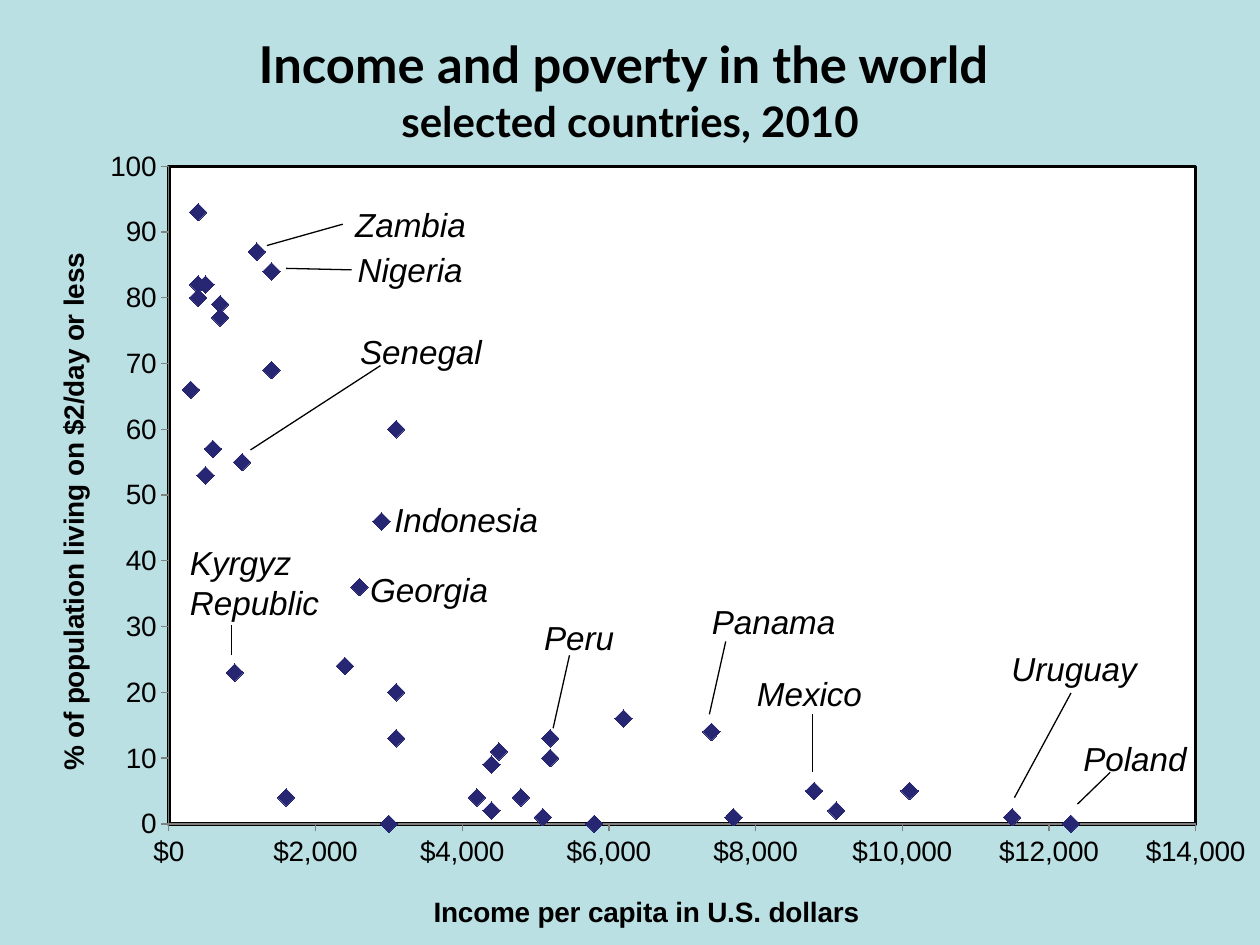
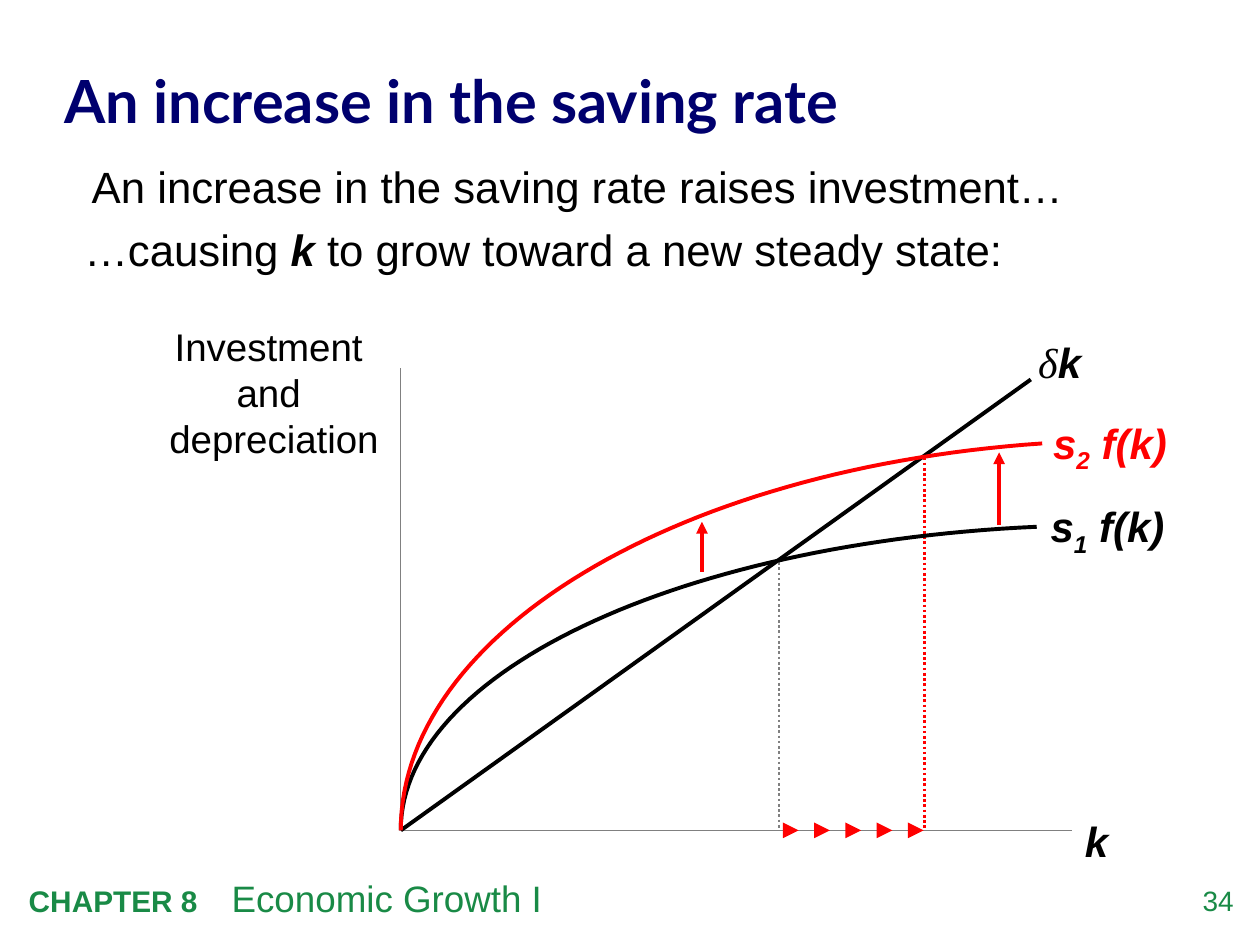
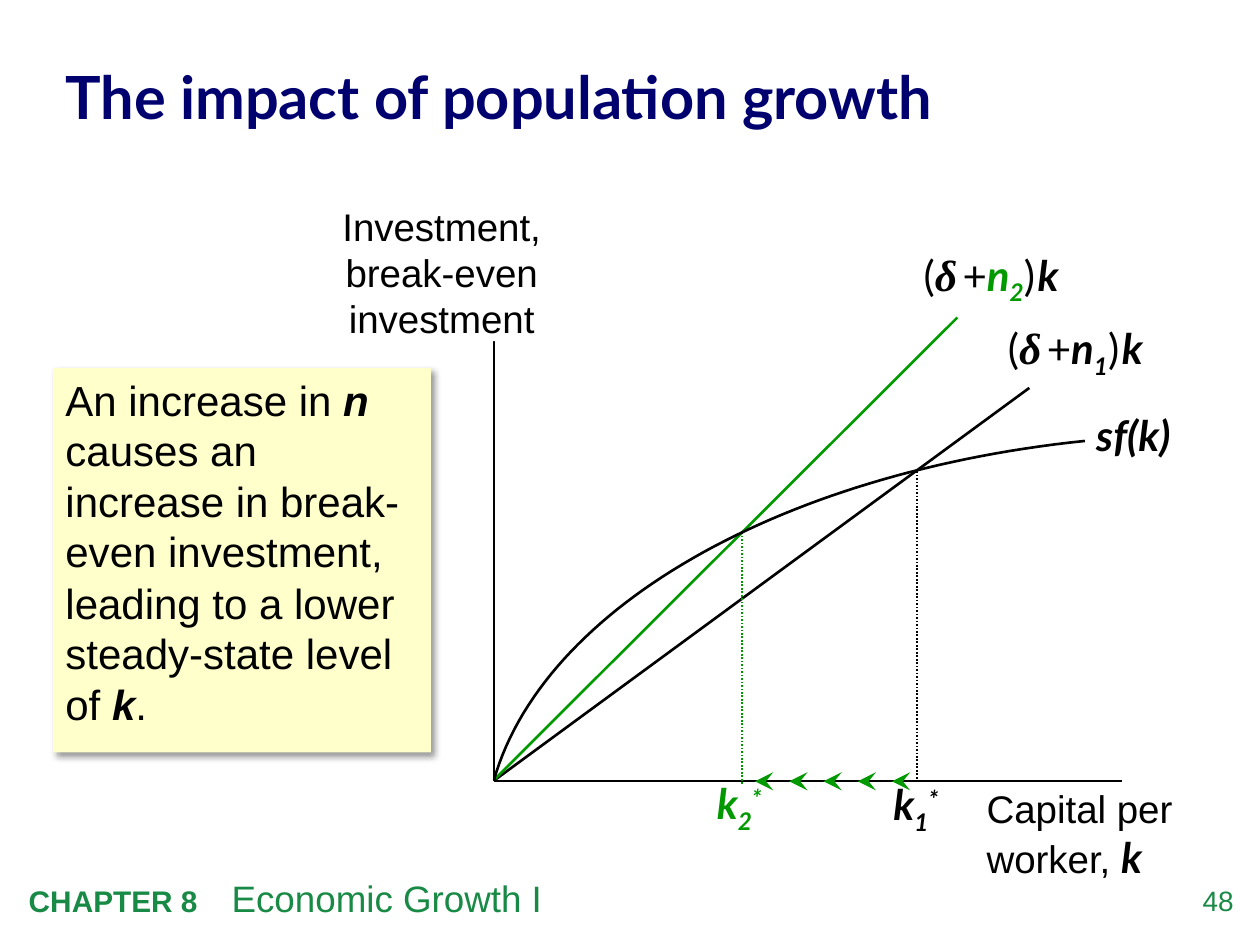
"""Builds three economic growth slides: a poverty scatter chart and two saving diagrams."""
from copy import deepcopy

from lxml import etree
from pptx import Presentation
from pptx.chart.data import XyChartData
from pptx.dml.color import RGBColor
from pptx.enum.chart import XL_CHART_TYPE, XL_MARKER_STYLE, XL_TICK_MARK
from pptx.enum.dml import MSO_LINE
from pptx.enum.shapes import MSO_CONNECTOR, MSO_SHAPE
from pptx.enum.text import MSO_ANCHOR, MSO_AUTO_SIZE, PP_ALIGN
from pptx.oxml.ns import qn
from pptx.util import Cm, Pt

SCATTER = XL_CHART_TYPE.XY_SCATTER
DIAMOND = XL_MARKER_STYLE.DIAMOND
TICK_OUT = XL_TICK_MARK.OUTSIDE
DOTTED = MSO_LINE.ROUND_DOT
STRAIGHT = MSO_CONNECTOR.STRAIGHT
RECTANGLE = MSO_SHAPE.RECTANGLE
TOP, MIDDLE = MSO_ANCHOR.TOP, MSO_ANCHOR.MIDDLE
FIXED = MSO_AUTO_SIZE.NONE
LEFT, CENTER, RIGHT = PP_ALIGN.LEFT, PP_ALIGN.CENTER, PP_ALIGN.RIGHT

BLACK, WHITE, GRAY, RED, GREEN = "000000", "FFFFFF", "808080", "FF0000", "009900"
PALE_BLUE, NAVY, FOOTER_GREEN = "BBE0E3", "00006E", "198A46"
MARKER_BLUE, NOTE_YELLOW = "262673", "FFFFCC"
BODY_FONT, TITLE_FONT, GREEK_FONT = "Arial", "Lato", "Times New Roman"

STRONG = dict(bold=True, italic=True)
SUB = dict(STRONG, baseline=-25)
SUPER = dict(STRONG, baseline=30)
DEFAULT_INSETS = (0.25, 0.13, 0.25, 0.13)
FLUSH = (0, 0, 0, 0)
RAISED = (0, 0, 0, 0.25)

CHAPTER, CHAPTER_NAME = "CHAPTER 8", "Economic Growth I"

INCOMES = [300, 400, 400, 400, 500, 500, 600, 700, 700, 900, 1000, 1200, 1400,
           1400, 1600, 2400, 2600, 2900, 3000, 3100, 3100, 3100, 4200, 4400,
           4400, 4500, 4800, 5100, 5200, 5200, 5800, 6200, 7400, 7700, 8800,
           9100, 10100, 11500, 12300]
POVERTY = [66, 82, 93, 80, 53, 82, 57, 77, 79, 23, 55, 87, 69, 84, 4, 24, 36,
           46, 0, 60, 13, 20, 4, 2, 9, 11, 4, 1, 10, 13, 0, 16, 14, 1, 5, 2, 5,
           1, 0]
COUNTRIES = [
    ("Zambia", (6.91, 3.99, 4.5, 1.07), (5.38, 4.95, 6.91, 4.52)),
    ("Nigeria", (6.96, 4.9, 4.5, 1.07), (5.77, 5.41, 7.09, 5.44)),
    ("Senegal", (7.01, 6.55, 3.2, 1.07), (5.05, 9.07, 7.67, 7.37)),
    ("Indonesia", (7.7, 9.93, 4.5, 1.07), None),
    ("Georgia", (7.21, 11.35, 3.23, 1.07), None),
    ("Kyrgyz Republic", (3.58, 10.8, 3.43, 1.88), (4.67, 13.21, 4.67, 12.6)),
    ("Peru", (10.72, 12.32, 2.39, 1.07), (11.15, 14.68, 11.48, 13.21)),
    ("Panama", (14.1, 11.99, 3.66, 1.07), (14.3, 14.4, 14.63, 12.93)),
    ("Mexico", (15.01, 13.44, 2.74, 1.07), (16.38, 15.57, 16.38, 14.4)),
    ("Uruguay", (20.14, 12.93, 3.15, 1.07), (20.45, 16.08, 21.59, 13.97)),
    ("Poland", (21.59, 14.76, 2.64, 1.07), (21.72, 16.21, 22.38, 15.57)),
]


def break_even(index, color):
    """Return the runs of the break-even formula for one growth rate."""
    return ["(", ("δ", dict(STRONG, size=25, font=GREEK_FONT)), (" ", dict(size=12)),
            "+", ("n", dict(STRONG, color=color)), (index, dict(SUB, color=color)),
            ")", (" ", dict(size=6)), ("k", STRONG)]


def saving(index):
    """Return the runs of the investment formula for one saving rate."""
    return [("s", STRONG), (index, SUB), (" f(k)", STRONG)]


def steady_state(index):
    """Return the runs of a steady-state capital stock."""
    return [("k", STRONG), (index, SUB), ("*", SUPER)]


LATO = dict(font=TITLE_FONT, anchor=MIDDLE, insets=FLUSH)
LATO_RAISED = dict(LATO, insets=RAISED)

SAVING_RATE = dict(
    title="An increase in the saving rate", title_box=(1.3, 0.66, 22.91, 2.62),
    number="34",
    lines=[
        ((8.08, 7.42, 8.08, 16.74), GRAY, 0.75, {}),
        ((8.08, 16.74, 21.62, 16.74), GRAY, 0.75, {}),
        ((8.08, 16.74, 20.78, 7.65), BLACK, 2.25, {}),
        ((15.7, 11.33, 15.7, 16.74), GRAY, 1.5, dict(dash=DOTTED)),
        ((18.64, 9.22, 18.64, 16.74), RED, 1.5, dict(dash=DOTTED)),
        ((20.14, 10.59, 20.14, 9.12), RED, 2.25, dict(arrow="triangle")),
        ((14.15, 11.53, 14.15, 10.52), RED, 2.25, dict(arrow="triangle")),
    ],
    curves=[
        ([(20.9, 10.62), (13.61, 10.95), (8.08, 13.59), (8.08, 16.74)], BLACK, 2.25),
        ([(21.01, 8.94), (13.61, 9.45), (8.08, 12.78), (8.08, 16.74)], RED, 2.25),
    ],
    steps=dict(start=15.9, y=16.74, gap=0.63, length=0.2, color=RED, width=3,
               arrow="triangle"),
    labels=[
        (["An increase in the saving rate raises investment…"],
         (1.6, 3.1, 22.38, 1.32), dict(size=25)),
        (["…causing ", ("k", STRONG), " to grow toward a new steady state:"],
         (1.45, 4.37, 22.4, 1.32), dict(size=25)),
        (["Investment \nand \ndepreciation"], (2.77, 6.38, 5.51, 3.05),
         dict(size=22, align=CENTER, insets=(0.13,) * 4)),
        ([("k", STRONG)], (21.62, 16.31, 1.27, 1.27), {}),
        ([("δ", dict(font=GREEK_FONT, italic=True)), ("k", STRONG)],
         (20.68, 6.65, 1.83, 1.32), {}),
        (saving("1"), (20.93, 9.96, 3, 1.27), {}),
        (saving("2"), (20.98, 8.28, 3.61, 1.27), dict(color=RED)),
    ])

POPULATION_GROWTH = dict(
    title="The impact of population growth", title_box=(1.32, 0.64, 19.99, 2.49),
    number="48",
    lines=[
        ((9.96, 6.02, 9.96, 15.75), BLACK, 1, {}),
        ((9.96, 15.75, 22.61, 15.75), BLACK, 1, {}),
        ((9.98, 15.72, 20.75, 7.82), BLACK, 1.5, {}),
        ((9.98, 15.7, 19.3, 6.4), GREEN, 1.5, {}),
        ((18.49, 9.5, 18.49, 15.75), BLACK, 1, dict(dash=DOTTED)),
        ((14.96, 10.8, 14.96, 15.8), GREEN, 1, dict(dash=DOTTED)),
    ],
    curves=[
        ([(21.87, 8.89), (15.7, 9.53), (10.95, 12.27), (9.96, 15.72)], BLACK, 1.5),
    ],
    steps=dict(start=18.21, y=15.75, gap=-0.69, length=-0.23, color=GREEN,
               width=3.5, arrow="stealth"),
    labels=[
        (["Investment, break-even investment"], (6.35, 4.09, 5.11, 2.79),
         dict(size=22, align=CENTER, anchor=MIDDLE, insets=FLUSH, fill=WHITE)),
        (["Capital per \nworker, ", ("k", dict(STRONG, size=24, font=TITLE_FONT))],
         (19.89, 15.82, 4.45, 1.96), dict(size=22, anchor=MIDDLE, insets=FLUSH)),
        ([("sf(k)", STRONG)], (22.1, 8.26, 2.64, 1.02), LATO),
        (break_even("1", BLACK), (20.32, 6.53, 3.81, 1.07), LATO),
        (break_even("2", GREEN), (18.62, 5.05, 3.81, 1.32), LATO_RAISED),
        (steady_state("1"), (18.01, 15.77, 1.47, 1.27), LATO_RAISED),
        (steady_state("2"), (14.45, 15.75, 1.47, 1.27), dict(LATO_RAISED, color=GREEN)),
        (["An increase in ", ("n", STRONG),
          " causes an increase in break-even investment,"],
         (1.07, 7.42, 7.62, 7.75), dict(fill=NOTE_YELLOW, shadow=True)),
        (["leading to a lower steady-state level of ", ("k", STRONG), "."],
         (1.07, 11.51, 7.62, 3.3), {}),
    ])


def rgb(color):
    """Return a colour from its hex string."""
    return RGBColor.from_string(color)


def lengths(values):
    """Return centimetre values as lengths."""
    return [Cm(value) for value in values]


def style(font, size, name=BODY_FONT, color=BLACK, bold=False, italic=False):
    """Format one font."""
    font.size, font.name, font.bold, font.italic = Pt(size), name, bold, italic
    font.color.rgb = rgb(color)


def write(frame, runs, size=24, font=BODY_FONT, color=BLACK, align=LEFT,
          anchor=TOP, insets=DEFAULT_INSETS):
    """Write formatted runs as the only paragraph of a text frame."""
    frame.word_wrap, frame.auto_size, frame.vertical_anchor = True, FIXED, anchor
    (frame.margin_left, frame.margin_top,
     frame.margin_right, frame.margin_bottom) = lengths(insets)
    paragraph = frame.paragraphs[0]
    paragraph.alignment = align
    for item in runs:
        text, changes = (item, {}) if isinstance(item, str) else item
        look = dict(size=size, font=font, color=color) | changes
        baseline = look.pop("baseline", 0)
        for number, part in enumerate(text.split("\n")):
            if number:
                paragraph.add_line_break()
            if not part:
                continue
            run = paragraph.add_run()
            run.text = part
            style(run.font, name=look["font"],
                  **{key: value for key, value in look.items() if key != "font"})
            if baseline:
                run.font._element.set("baseline", str(baseline * 1000))
    for line_break in paragraph._p.findall(qn("a:br")):
        line_break.insert(0, deepcopy(paragraph.runs[0].font._element))
    return paragraph


def add_label(slide, runs, box, fill=None, shadow=False, **look):
    """Add text, on a filled rectangle when a fill is given."""
    if fill:
        label = slide.shapes.add_shape(RECTANGLE, *lengths(box))
        label.fill.solid()
        label.fill.fore_color.rgb = rgb(fill)
        label.line.fill.background()
        label.shadow.inherit = False
    else:
        label = slide.shapes.add_textbox(*lengths(box))
    if shadow:
        effects = label._element.spPr.find(qn("a:effectLst"))
        outer = etree.SubElement(effects, qn("a:outerShdw"), blurRad=str(Pt(4)),
                                 dist=str(Pt(3)), dir="2700000", algn="tl")
        tint = etree.SubElement(outer, qn("a:srgbClr"), val=BLACK)
        etree.SubElement(tint, qn("a:alpha"), val="40000")
    return write(label.text_frame, runs, **look)


def add_line(slide, ends, color=BLACK, width=0.75, dash=None, arrow=None):
    """Add a straight line with an optional dash and arrowhead."""
    connector = slide.shapes.add_connector(STRAIGHT, *lengths(ends))
    connector.line.color.rgb = rgb(color)
    connector.line.width = Pt(width)
    if dash:
        connector.line.dash_style = dash
    if arrow:
        etree.SubElement(connector.line._get_or_add_ln(), qn("a:tailEnd"), type=arrow)
    etree.SubElement(connector._element.spPr, qn("a:effectLst"))


def add_curve(slide, controls, color, width, pieces=60):
    """Add a cubic curve through its four control points."""
    points = []
    for step in range(pieces + 1):
        t = step / pieces
        weights = ((1 - t) ** 3, 3 * t * (1 - t) ** 2, 3 * t ** 2 * (1 - t), t ** 3)
        points.append([Cm(sum(w * value for w, value in zip(weights, axis)))
                       for axis in zip(*controls)])
    builder = slide.shapes.build_freeform(*points[0])
    builder.add_line_segments(points[1:], close=False)
    curve = builder.convert_to_shape()
    curve.fill.background()
    curve.line.color.rgb = rgb(color)
    curve.line.width = Pt(width)
    curve.shadow.inherit = False


def add_slide(deck, background, title, box, **look):
    """Add a slide with a background and a title."""
    slide = deck.slides.add_slide(deck.slide_layouts[5])
    slide.background.fill.solid()
    slide.background.fill.fore_color.rgb = rgb(background)
    heading = slide.shapes.title
    heading.left, heading.top, heading.width, heading.height = lengths(box)
    paragraph = write(heading.text_frame, title, font=TITLE_FONT, anchor=MIDDLE,
                      insets=FLUSH, **look)
    paragraph.line_spacing = 1.05
    return slide


def add_footer(slide, number):
    """Add the chapter line and the slide number."""
    add_label(slide, [number], (23.47, 17.81, 1.4, 0.81), size=16,
              color=FOOTER_GREEN, align=RIGHT, insets=FLUSH)
    chapter = add_label(slide, [(CHAPTER + "\t", dict(size=17, bold=True)), CHAPTER_NAME],
                        (0.33, 17.53, 20.78, 1.14), size=21, color=FOOTER_GREEN)
    stops = etree.SubElement(chapter._p.get_or_add_pPr(), qn("a:tabLst"))
    etree.SubElement(stops, qn("a:tab"), pos=str(Cm(4.09)), algn="l")


def place(element, index, **values):
    """Give a chart part a manual layout."""
    layout = element.find(qn("c:layout"))
    if layout is None:
        layout = etree.Element(qn("c:layout"))
        element.insert(index, layout)
    manual = etree.SubElement(layout, qn("c:manualLayout"))
    for key, value in values.items():
        etree.SubElement(manual, qn("c:" + key), val=str(value))


def format_axis(axis, title, top, step, number_format, x, y):
    """Format one axis of the scatter chart and place its title."""
    axis.minimum_scale, axis.maximum_scale, axis.major_unit = 0, top, step
    axis.has_major_gridlines = False
    axis.major_tick_mark = TICK_OUT
    axis.format.line.color.rgb = rgb(GRAY)
    axis.tick_labels.number_format = number_format
    axis.tick_labels.number_format_is_linked = False
    style(axis.tick_labels.font, 16)
    frame = axis.axis_title.text_frame
    frame.text = title
    style(frame.paragraphs[0].runs[0].font, 16, bold=True)
    place(axis.axis_title._element, 1, xMode="edge", yMode="edge", x=x, y=y)


def add_poverty_chart(slide):
    """Add the scatter chart of income and poverty."""
    data = XyChartData()
    series = data.add_series("Series 1")
    for income, share in zip(INCOMES, POVERTY):
        series.add_data_point(income, share)
    chart = slide.shapes.add_chart(SCATTER, *lengths((0, 2.9, 25.4, 16.15)), data).chart
    chart.has_legend = chart.has_title = False
    style(chart.font, 10)
    format_axis(chart.category_axis, "Income per capita in U.S. dollars",
                14000, 2000, '"$"#,##0', 0.34, 0.93)
    format_axis(chart.value_axis, "% of population living on $2/day or less",
                100, 10, "0", 0.04, 0.13)
    turned = chart.value_axis.axis_title.text_frame._txBody.find(qn("a:bodyPr"))
    turned.set("rot", "-5400000")
    turned.set("vert", "horz")

    plot = chart.plots[0]
    plot.vary_by_categories = False
    countries = plot.series[0]
    countries.format.line.fill.background()
    countries.marker.style, countries.marker.size = DIAMOND, 10
    countries.marker.format.fill.solid()
    countries.marker.format.fill.fore_color.rgb = rgb(MARKER_BLUE)
    countries.marker.format.line.color.rgb = rgb(MARKER_BLUE)

    area = chart._chartSpace.chart.plotArea
    place(area, 0, layoutTarget="inner", xMode="edge", yMode="edge",
          x=0.134, y=0.028, w=0.815, h=0.821)
    look = etree.SubElement(area, qn("c:spPr"))
    border = etree.Element(qn("a:ln"), w=str(Pt(2)))
    for parent, color in ((look, WHITE), (border, BLACK)):
        fill = etree.SubElement(parent, qn("a:solidFill"))
        etree.SubElement(fill, qn("a:srgbClr"), val=color)
    look.append(border)


def build_poverty(deck):
    """Build the slide on income and poverty."""
    title = [("Income and poverty in the world \n", dict(size=29, bold=True)),
             ("selected countries, 2010", dict(bold=True))]
    slide = add_slide(deck, PALE_BLUE, title, (0, 0.41, 25.4, 2.72), align=CENTER)
    add_poverty_chart(slide)
    for country, box, leader in COUNTRIES:
        if leader:
            add_line(slide, leader)
        add_label(slide, [(country, dict(italic=True))], box, size=19)


def build_diagram(deck, diagram):
    """Build one slide with a growth diagram."""
    slide = add_slide(deck, WHITE, [(diagram["title"], dict(bold=True))],
                      diagram["title_box"], size=34, color=NAVY)
    add_footer(slide, diagram["number"])
    for ends, color, width, options in diagram["lines"]:
        add_line(slide, ends, color, width, **options)
    for controls, color, width in diagram["curves"]:
        add_curve(slide, controls, color, width)
    steps = diagram["steps"]
    for number in range(5):
        x = steps["start"] + number * steps["gap"]
        add_line(slide, (x, steps["y"], x + steps["length"], steps["y"]),
                 steps["color"], steps["width"], arrow=steps["arrow"])
    for runs, box, look in diagram["labels"]:
        add_label(slide, runs, box, **look)


def main():
    """Build and save the slides."""
    deck = Presentation()
    deck.slide_width, deck.slide_height = Cm(25.4), Cm(19.05)
    build_poverty(deck)
    for diagram in (SAVING_RATE, POPULATION_GROWTH):
        build_diagram(deck, diagram)
    deck.save("out.pptx")


if __name__ == "__main__":
    main()
